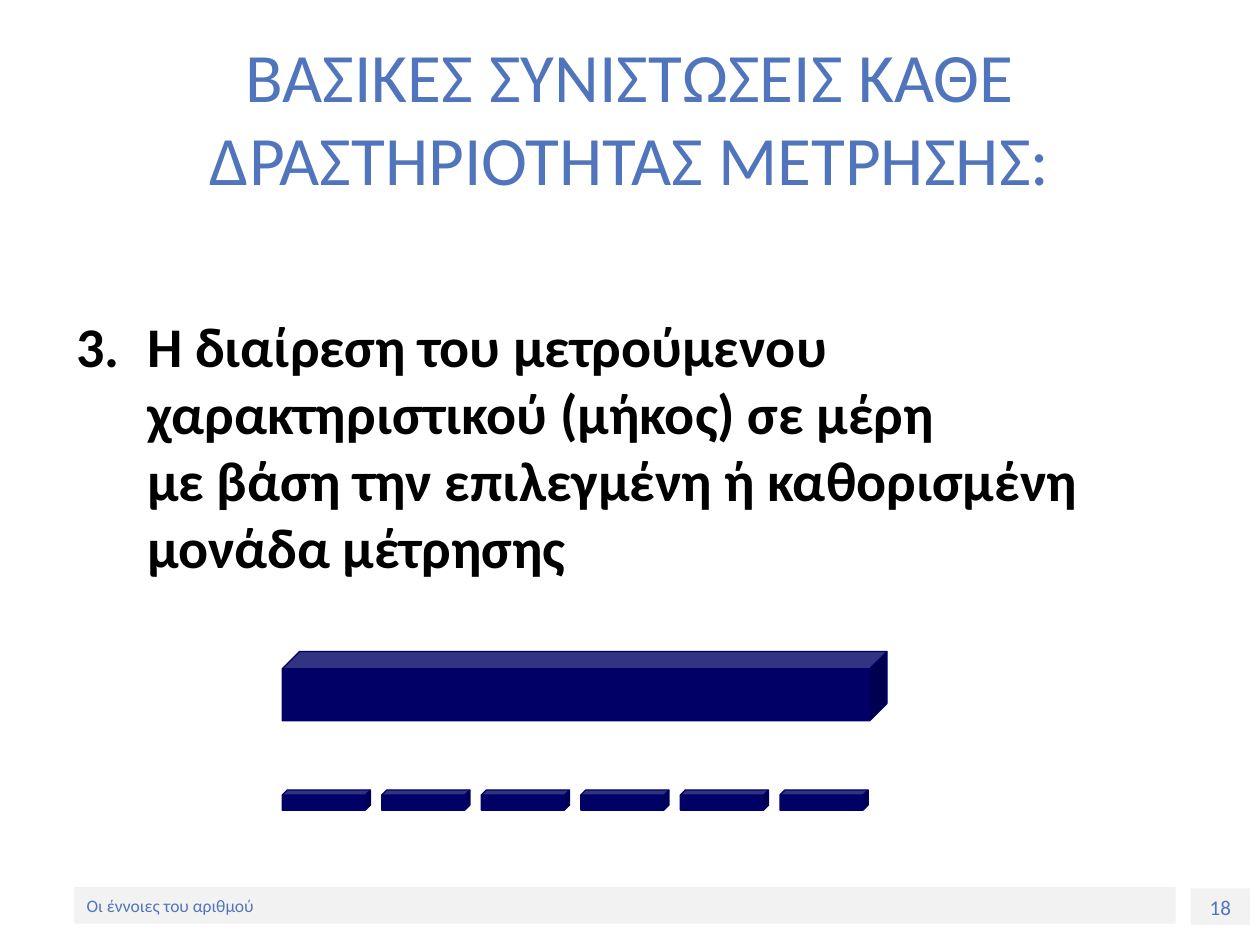
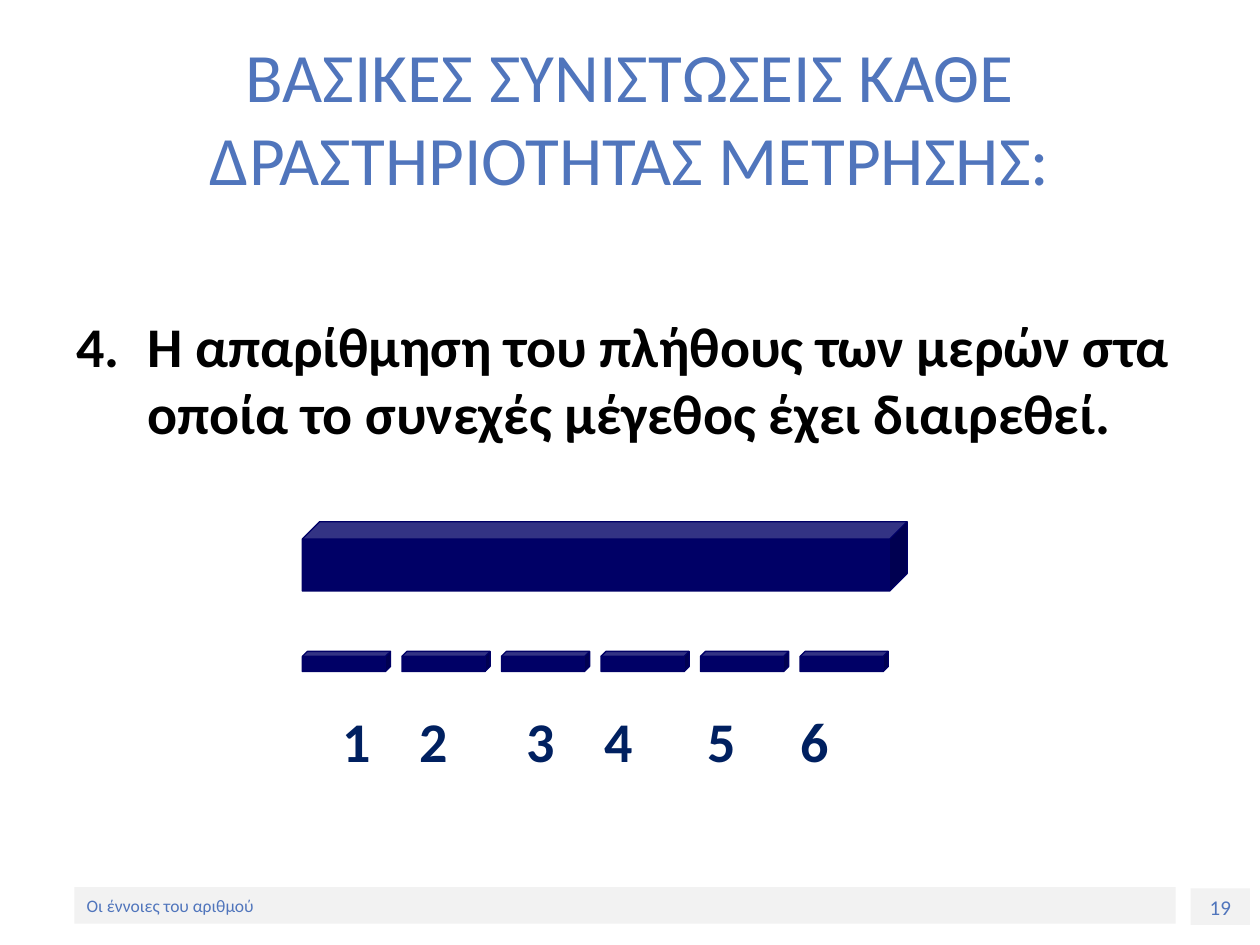
from dataclasses import dataclass
from typing import Any, Optional

from lxml import etree
from pptx import Presentation
from pptx.dml.color import RGBColor
from pptx.enum.shapes import MSO_SHAPE
from pptx.enum.text import MSO_ANCHOR, PP_ALIGN
from pptx.oxml.ns import qn
from pptx.util import Inches, Pt

CUBE, RECT = MSO_SHAPE.CUBE, MSO_SHAPE.RECTANGLE
LEFT, CENTER = PP_ALIGN.LEFT, PP_ALIGN.CENTER
TOP, MIDDLE = MSO_ANCHOR.TOP, MSO_ANCHOR.MIDDLE


@dataclass(frozen=True)
class Theme:
    font: str = "Calibri"
    blue: str = "5075BC"
    band: str = "F2F2F2"
    bar: str = "000066"
    body: str = "000000"
    count: str = "002060"
    title_size: float = 39.6
    body_size: float = 32
    page_size: float = 12
    foot_size: float = 10


@dataclass(frozen=True)
class Box:
    left: float
    top: float
    width: float
    height: float

    def emu(self) -> tuple[int, ...]:
        return tuple(Inches(n) for n in (self.left, self.top, self.width, self.height))


@dataclass(frozen=True)
class Step:
    page: int
    number: int
    text: str
    bar_left: float
    bar_top: float
    unit_top: float
    count_top: Optional[float] = None


THEME = Theme()
TITLE = "ΒΑΣΙΚΕΣ ΣΥΝΙΣΤΩΣΕΙΣ ΚΑΘΕ ΔΡΑΣΤΗΡΙΟΤΗΤΑΣ ΜΕΤΡΗΣΗΣ:"
FOOTER = "Οι έννοιες του αριθμού"
UNITS = 6
PITCH = 0.79
TABS = (0.33, 0.94, 1.79, 2.41, 3.23, 3.97)
STEPS = (
    Step(18, 3, "Η διαίρεση του μετρούμενου χαρακτηριστικού (μήκος) σε μέρη\v"
         "με βάση την επιλεγμένη ή καθορισμένη μονάδα μέτρησης", 2.24, 5.17, 6.27),
    Step(19, 4, "Η απαρίθμηση του πλήθους των μερών στα οποία το συνεχές μέγεθος "
         "έχει διαιρεθεί.", 2.4, 4.14, 5.17, 5.56),
)


def write(shape: Any, text: str, *, size: float, color: str, bold: bool = False,
          align: Any = LEFT, anchor: Any = TOP, number: Optional[int] = None,
          tabs: tuple[float, ...] = ()) -> None:
    """Put formatted text in a shape, with an optional list number or tab stops."""
    frame = shape.text_frame
    frame.word_wrap = True
    frame.vertical_anchor = anchor
    para = frame.paragraphs[0]
    para.text = text
    para.alignment = align
    props = para._p.get_or_add_pPr()
    if number is not None:
        props.set("marL", str(Inches(0.56)))
        props.set("indent", str(-Inches(0.56)))
        etree.SubElement(props, qn("a:buAutoNum"), type="arabicPeriod", startAt=str(number))
    if tabs:
        stops = etree.SubElement(props, qn("a:tabLst"))
        for pos in tabs:
            etree.SubElement(stops, qn("a:tab"), pos=str(Inches(pos)), algn="ctr")
    for run in para.runs:
        run.font.name = THEME.font
        run.font.size = Pt(size)
        run.font.bold = bold
        run.font.color.rgb = RGBColor.from_string(color)


def label(slide: Any, box: Box, text: str, **style: Any) -> None:
    """Add a text box."""
    write(slide.shapes.add_textbox(*box.emu()), text, **style)


def solid(shapes: Any, kind: Any, box: Box, fill: str, line: Optional[str] = None) -> Any:
    """Add a flat preset shape, outlined only when a line colour is given."""
    shape = shapes.add_shape(kind, *box.emu())
    shape.shadow.inherit = False
    shape.fill.solid()
    shape.fill.fore_color.rgb = RGBColor.from_string(fill)
    if line:
        shape.line.color.rgb = RGBColor.from_string(line)
        shape.line.width = Pt(0.75)
    else:
        shape.line.fill.background()
    return shape


def frame(slide: Any, page: int) -> None:
    """Draw the title and footer bands shared by the slides."""
    tab = solid(slide.shapes, RECT, Box(9.45, 7.05, 0.47, 0.29), THEME.band)
    write(tab, str(page), size=THEME.page_size, color=THEME.blue, align=CENTER)
    band = solid(slide.shapes, RECT, Box(0.59, 7.04, 8.74, 0.29), THEME.band)
    write(band, FOOTER, size=THEME.foot_size, color=THEME.blue, anchor=MIDDLE)
    label(slide, Box(0.5, 0.3, 9, 1.25), TITLE, size=THEME.title_size,
          color=THEME.blue, align=CENTER, anchor=MIDDLE)


def draw(slide: Any, step: Step) -> None:
    """Draw one step: its text, the whole bar, its units and their count."""
    frame(slide, step.page)
    label(slide, Box(0.51, 2.42, 9, 2.3), step.text, size=THEME.body_size,
          color=THEME.body, bold=True, number=step.number)
    solid(slide.shapes, CUBE, Box(step.bar_left, step.bar_top, 4.8, 0.55),
          THEME.bar, THEME.bar)
    units = slide.shapes.add_group_shape()
    for i in range(UNITS):
        box = Box(step.bar_left + i * PITCH, step.unit_top, 0.7, 0.16)
        solid(units.shapes, CUBE, box, THEME.bar, THEME.bar)
    if step.count_top is not None:
        count = "".join(f"\t{i + 1}" for i in range(UNITS))
        label(slide, Box(step.bar_left, step.count_top, 4.65, 0.63), count,
              size=THEME.body_size, color=THEME.count, bold=True, tabs=TABS)


def main() -> None:
    """Build and save the slides."""
    deck = Presentation()
    deck.slide_width, deck.slide_height = Inches(10), Inches(7.5)
    for step in STEPS:
        draw(deck.slides.add_slide(deck.slide_layouts[6]), step)
    deck.save("out.pptx")


if __name__ == "__main__":
    main()
